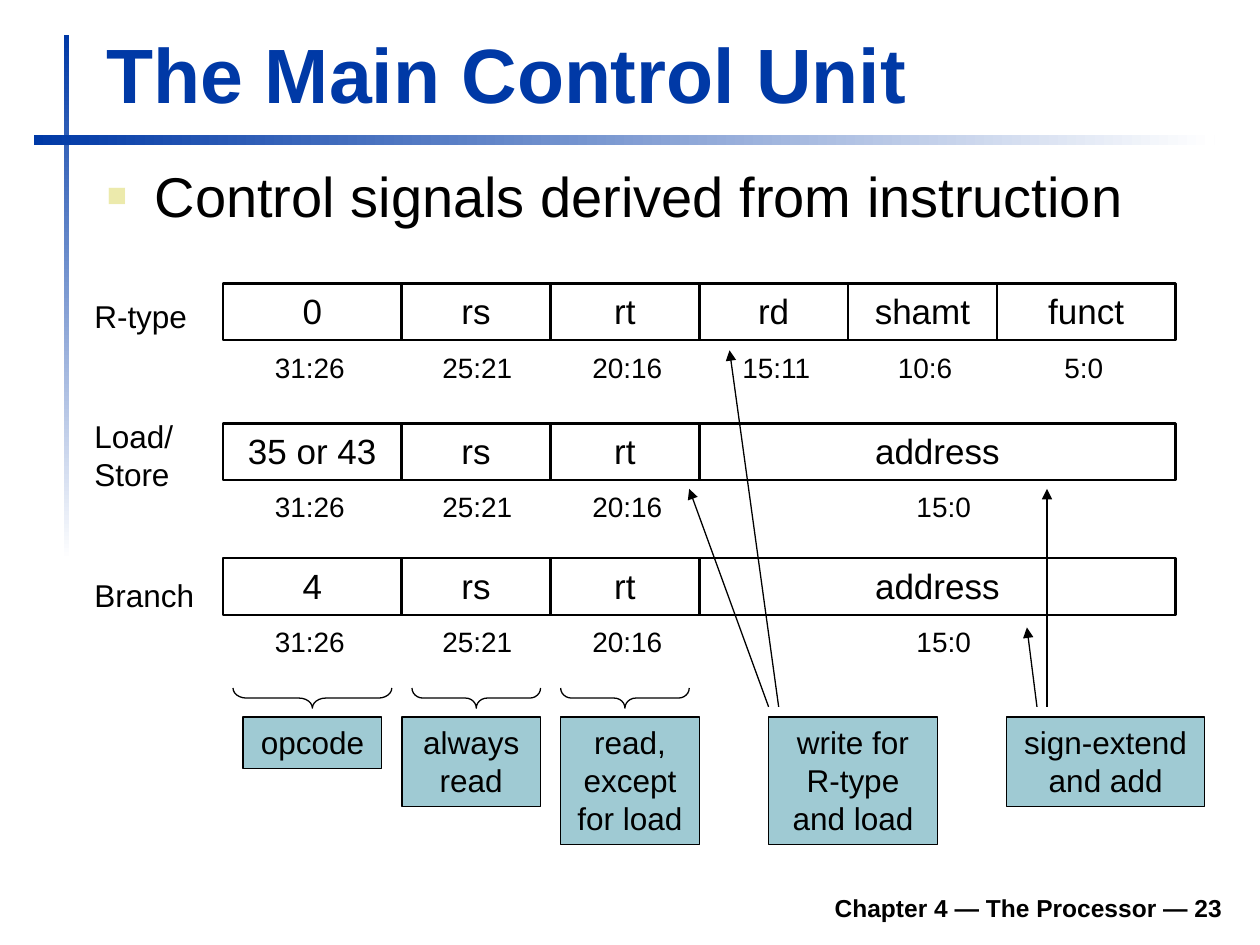
import lxml.etree
import pptx
import pptx.dml.color
import pptx.enum.shapes
import pptx.enum.text
import pptx.oxml.ns
import pptx.util

Inches = pptx.util.Inches
Pt = pptx.util.Pt
SHAPE = pptx.enum.shapes.MSO_SHAPE
ALIGN = pptx.enum.text.PP_ALIGN
ANCHOR = pptx.enum.text.MSO_ANCHOR

BLUE, BLACK, WHITE, TEAL, SAND = "0039A6", "000000", "FFFFFF", "9FCAD3", "ECEAAC"
BIT_WIDTH = 7.56 / 32
CELL_HEIGHT = 0.45


def rgb(value):
    """Turn a hex string into a colour."""
    return pptx.dml.color.RGBColor.from_string(value)


def add_child(parent, tag, **attributes):
    """Append a DrawingML element with the given attributes."""
    return lxml.etree.SubElement(parent, pptx.oxml.ns.qn(tag), attributes)


def write(shape, text, size=18, color=BLACK, bold=False, align=ALIGN.LEFT,
          anchor=ANCHOR.TOP, wrap=True):
    """Fill a shape with one formatted paragraph and return it."""
    frame = shape.text_frame
    frame.word_wrap = wrap
    frame.vertical_anchor = anchor
    paragraph = frame.paragraphs[0]
    paragraph.text = text
    paragraph.alignment = align
    for run in paragraph.runs:
        run.font.name = "Arial"
        run.font.size = Pt(size)
        run.font.bold = bold
        run.font.color.rgb = rgb(color)
    return paragraph


def add_text(slide, box, text, **style):
    """Place a text box and return its paragraph."""
    return write(slide.shapes.add_textbox(*map(Inches, box)), text, **style)


def add_outline(slide, kind, box, fill=None, weight=0.75):
    """Place a preset shape with a black outline."""
    shape = slide.shapes.add_shape(kind, *map(Inches, box))
    shape.shadow.inherit = False
    shape.line.color.rgb = rgb(BLACK)
    shape.line.width = Pt(weight)
    if fill:
        shape.fill.solid()
        shape.fill.fore_color.rgb = rgb(fill)
    else:
        shape.fill.background()
    return shape


def add_fading_bar(slide, box, angle):
    """Place a bar that fades from blue to white."""
    bar = slide.shapes.add_shape(SHAPE.RECTANGLE, *map(Inches, box))
    bar.shadow.inherit = False
    bar.line.fill.background()
    bar.fill.gradient()
    bar.fill.gradient_angle = angle
    for stop, color in zip(bar.fill.gradient_stops, (BLUE, WHITE)):
        stop.color.rgb = rgb(color)


def add_heading(slide, left, top, width):
    """Place the title and the bullet below it."""
    add_text(slide, (left, top, width, 0.83), "The Main Control Unit",
             size=44, color=BLUE, bold=True, anchor=ANCHOR.BOTTOM)
    bullet = add_text(slide, (left, top + 1.07, width, 0.76),
                      "Control signals derived from instruction", size=32)
    bullet.space_before = Pt(4)
    properties = bullet._p.get_or_add_pPr()
    properties.set("marL", str(Inches(0.38)))
    properties.set("indent", str(Inches(-0.38)))
    add_child(add_child(properties, "a:buClr"), "a:srgbClr", val=SAND)
    add_child(properties, "a:buSzPct", val="60000")
    add_child(properties, "a:buFont", typeface="Arial")
    add_child(properties, "a:buChar", char="■")


def add_format(slide, left, top, fields):
    """Draw an instruction format, each field as wide as its bits."""
    for name, high, low, label_shift in fields:
        x = left + (31 - high) * BIT_WIDTH
        width = (high - low + 1) * BIT_WIDTH
        cell = add_outline(slide, SHAPE.RECTANGLE, (x, top, width, CELL_HEIGHT), weight=1.5)
        write(cell, name, size=20, align=ALIGN.CENTER)
        add_text(slide, (x + width / 2 + label_shift - 0.38, top + 0.48, 0.76, 0.37),
                 f"{high}:{low}", size=16, align=ALIGN.CENTER, wrap=False)


def add_brace(slide, center, middle, length, curve):
    """Draw a brace that opens upward."""
    depth = 0.16
    brace = add_outline(slide, SHAPE.LEFT_BRACE,
                        (center - depth / 2, middle - length / 2, depth, length))
    brace.rotation = 270
    brace.adjustments[0] = curve


def add_callout(slide, left, top, width, lines, text):
    """Draw a filled note that is as tall as its lines."""
    note = add_outline(slide, SHAPE.RECTANGLE,
                       (left, top, width, 0.11 + 0.3 * lines), fill=TEAL)
    write(note, text, align=ALIGN.CENTER)


def add_arrow(slide, start, end):
    """Draw a thin arrow from start to end."""
    arrow = slide.shapes.add_connector(pptx.enum.shapes.MSO_CONNECTOR.STRAIGHT,
                                       *map(Inches, start + end))
    arrow.line.color.rgb = rgb(BLACK)
    arrow.line.width = Pt(0.75)
    add_child(arrow.line._get_or_add_ln(), "a:tailEnd", type="triangle")
    add_child(arrow._element.spPr, "a:effectLst")


def add_formats(slide, left):
    """Draw the three instruction formats with their names."""
    registers = [("rs", 25, 21, 0.01), ("rt", 20, 16, 0.02)]
    address = ("address", 15, 0, 0.05)
    r_tail = [("rd", 15, 11, 0.02), ("shamt", 10, 6, 0.02), ("funct", 5, 0, -0.02)]
    formats = [
        ("R-type", 2.31, 0.4, 2.25, "0", r_tail),
        ("Load/\vStore", 3.26, 0.7, 3.36, "35 or 43", [address]),
        ("Branch", 4.52, 0.4, 4.43, "4", [address]),
    ]
    for name, name_top, name_height, top, opcode, tail in formats:
        add_format(slide, left, top, [(opcode, 31, 26, -0.02), *registers, *tail])
        add_text(slide, (0.65, name_top, 0.99, name_height), name, wrap=False)


def add_notes_row(slide, top):
    """Draw the braces, notes and arrows that explain the fields."""
    for center, length, curve in [(2.48, 1.26, 0.665), (3.78, 1.02, 0.539),
                                  (4.96, 1.02, 0.539)]:
        add_brace(slide, center, top - 0.15, length, curve)
    for left, width, lines, text in [
        (1.93, 1.1, 1, "opcode"),
        (3.19, 1.1, 2, "always read"),
        (4.45, 1.1, 3, "read, except for load"),
        (6.1, 1.34, 3, "write for R-type and load"),
        (7.99, 1.57, 2, "sign-extend and add"),
    ]:
        add_callout(slide, left, top, width, lines, text)
    for start_x, end in [(6.1, (5.47, 3.88)), (6.18, (5.79, 2.78)),
                         (8.23, (8.15, 4.98)), (8.31, (8.31, 3.88))]:
        add_arrow(slide, (start_x, top - 0.08), end)


def main():
    """Build and save the slide."""
    deck = pptx.Presentation()
    deck.slide_width, deck.slide_height = Inches(10), Inches(7.5)
    slide = deck.slides.add_slide(deck.slide_layouts[6])
    add_fading_bar(slide, (0.51, 0.28, 0.04, 4.17), 270)
    add_fading_bar(slide, (0.27, 1.07, 9.37, 0.08), 0)
    add_text(slide, (1.85, 6.98, 7.95, 0.39), "Chapter 4 — The Processor — 23",
             size=14, bold=True, align=ALIGN.RIGHT, anchor=ANCHOR.BOTTOM)
    add_heading(slide, 0.75, 0.16, 9.03)
    add_formats(slide, 1.77)
    add_notes_row(slide, 5.69)
    deck.save("out.pptx")


if __name__ == "__main__":
    main()
